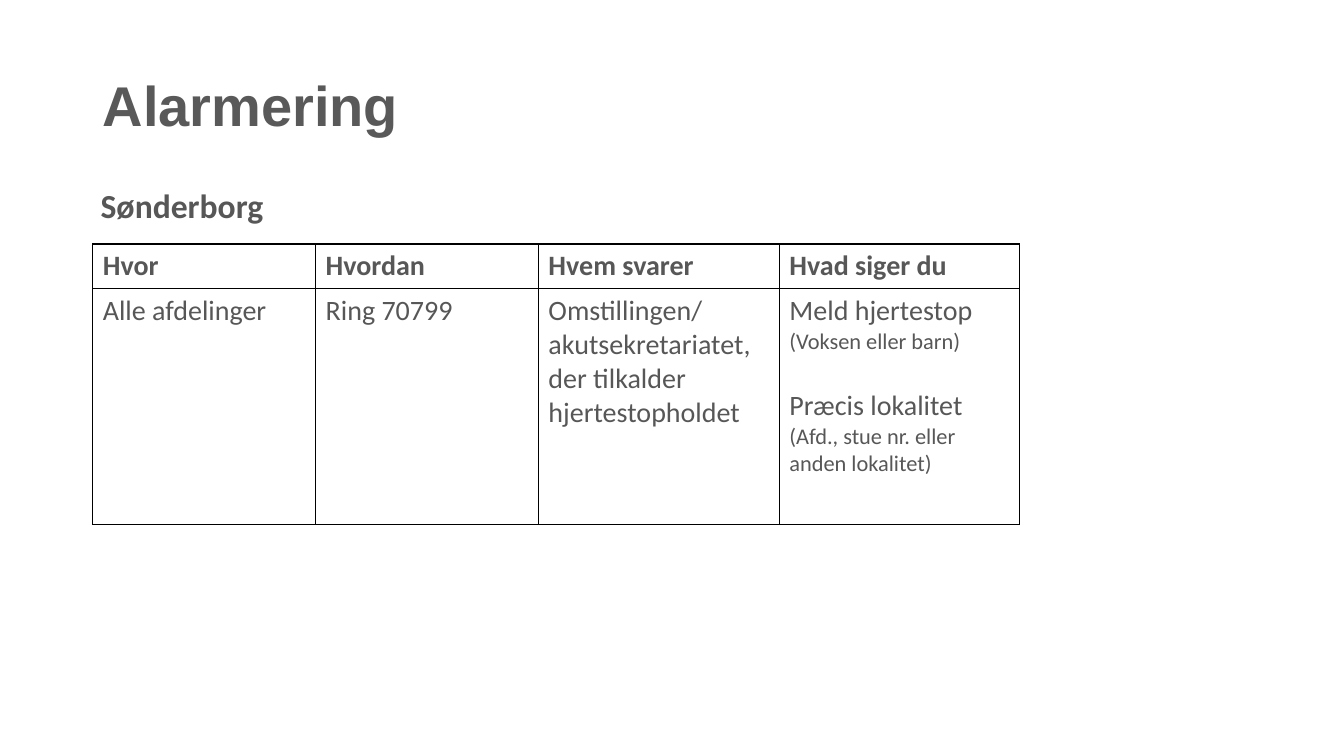
"""Build the slide with the alarm table."""
from lxml.etree import SubElement as Sub
from pptx import Presentation
from pptx.dml.color import RGBColor
from pptx.enum.text import MSO_ANCHOR as Anchor
from pptx.oxml.ns import qn
from pptx.util import Inches, Pt

GREY = RGBColor(0x57, 0x57, 0x57)
SLATE = RGBColor(0x59, 0x59, 0x59)
BLACK = RGBColor(0, 0, 0)
WHITE = RGBColor(0xFF, 0xFF, 0xFF)

TITLE = {"name": "Arial", "size": Pt(40), "bold": True}
PLACE = {"name": "Calibri", "size": Pt(24), "bold": True}
HEAD = {"name": "Calibri", "size": Pt(20), "bold": True}
BODY = {"name": "Calibri", "size": Pt(20), "bold": False}
SMALL = {"name": "Calibri", "size": Pt(16), "bold": False}

COLS = (2.21, 2.21, 2.39, 2.38)
ROWS = (0.44, 2.34)
HEADS = ("Hvor", "Hvordan", "Hvem svarer", "Hvad siger du")
PLAIN = (
    "Alle afdelinger",
    "Ring 70799",
    "Omstillingen/ akutsekretariatet, der tilkalder hjertestopholdet",
)
CALL = [
    [("Meld hjertestop", BODY)],
    [("(Voksen eller barn)", SMALL)],
    [("Præcis lokalitet ", BODY), ("(Afd., stue nr. eller anden lokalitet)", SMALL)],
]


def add_run(para, text, style, color=GREY):
    """Append a styled run to a paragraph."""
    run = para.add_run()
    run.text = text
    for key, value in style.items():
        setattr(run.font, key, value)
    run.font.color.rgb = color


def add_label(slide, box, text, style, color, wrap):
    """Add a one-line text box and return its paragraph."""
    frame = slide.shapes.add_textbox(*map(Inches, box)).text_frame
    frame.word_wrap = wrap
    frame.vertical_anchor = Anchor.MIDDLE
    para = frame.paragraphs[0]
    add_run(para, text, style, color)
    return para


def add_edges(cell):
    """Draw thin black borders around a cell."""
    props = cell._tc.get_or_add_tcPr()
    for i, side in enumerate(("lnL", "lnR", "lnT", "lnB")):
        line = props.makeelement(qn(f"a:{side}"), {"w": str(Pt(1))})
        fill = Sub(line, qn("a:solidFill"))
        Sub(fill, qn("a:srgbClr"), val=str(BLACK))
        props.insert(i, line)


def fill_cell(cell, paras):
    """Write styled paragraphs into a cell with fill and borders."""
    cell.fill.solid()
    cell.fill.fore_color.rgb = WHITE
    add_edges(cell)
    frame = cell.text_frame
    for i, runs in enumerate(paras):
        para = frame.add_paragraph() if i else frame.paragraphs[0]
        for text, style in runs:
            add_run(para, text, style)


def add_grid(slide):
    """Add the alarm table."""
    size = map(Inches, (0.92, 2.42, sum(COLS), sum(ROWS)))
    table = slide.shapes.add_table(len(ROWS), len(COLS), *size).table
    table.horz_banding = table.first_row = False
    for col, width in zip(table.columns, COLS):
        col.width = Inches(width)
    for row, height in zip(table.rows, ROWS):
        row.height = Inches(height)
    top = [[[(text, HEAD)]] for text in HEADS]
    low = [[[(text, BODY)]] for text in PLAIN] + [CALL]
    for r, line in enumerate((top, low)):
        for c, paras in enumerate(line):
            fill_cell(table.cell(r, c), paras)
    last = table.cell(1, len(COLS) - 1).text_frame.paragraphs[-1]
    last.space_before = Pt(24)


def main():
    """Create and save the slide."""
    deck = Presentation()
    deck.slide_width, deck.slide_height = Inches(13.33), Inches(7.5)
    slide = deck.slides.add_slide(deck.slide_layouts[6])
    add_grid(slide)
    title = add_label(slide, (0.92, 0.71, 8.97, 0.73), "Alarmering", TITLE, SLATE, True)
    title.line_spacing = 0.9
    add_label(slide, (0.9, 1.78, 1.83, 0.5), "Sønderborg", PLACE, GREY, False)
    deck.save("out.pptx")


if __name__ == "__main__":
    main()
